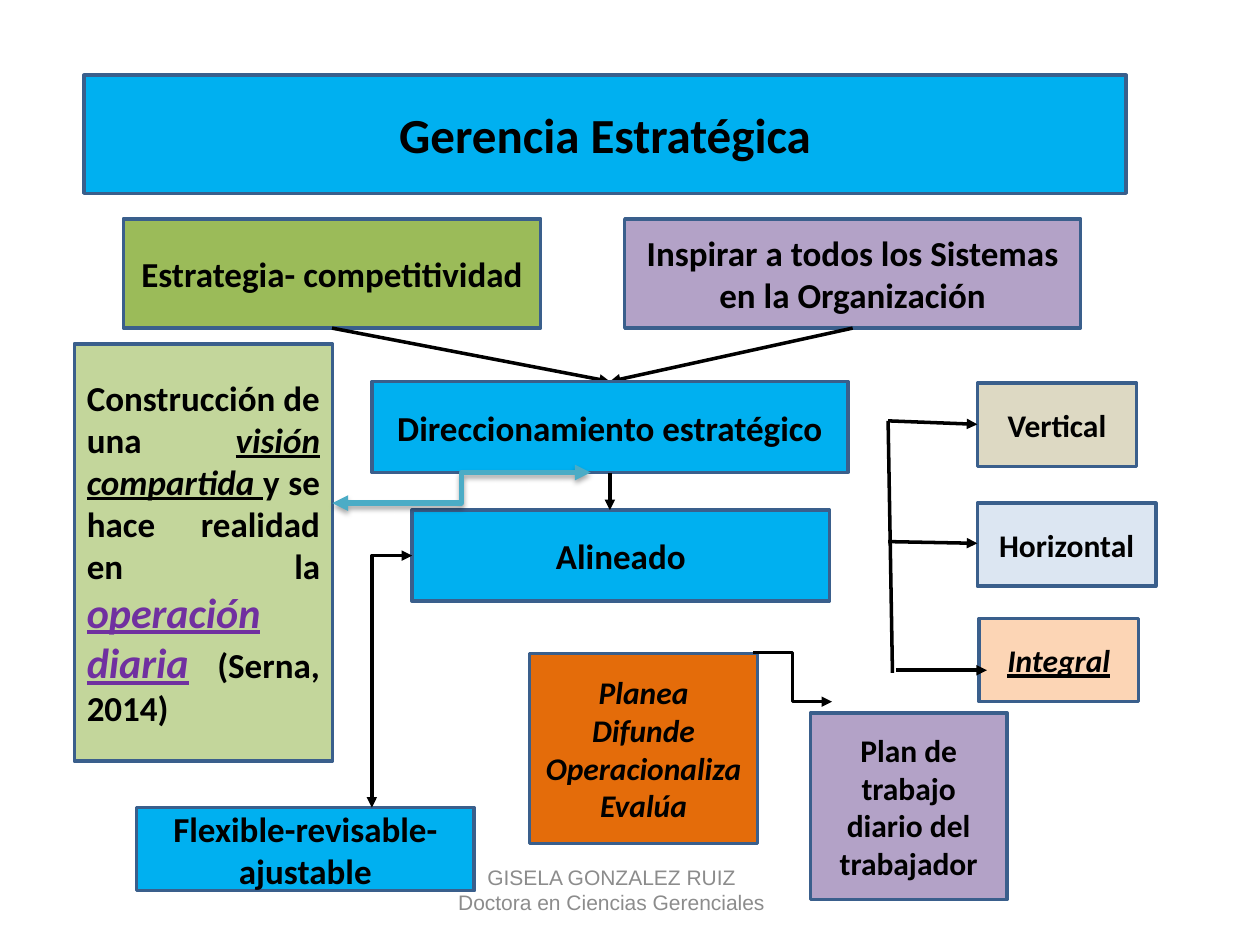
from lxml.etree import SubElement
from pptx import Presentation
from pptx.dml.color import RGBColor
from pptx.enum.shapes import MSO_CONNECTOR, MSO_SHAPE
from pptx.enum.text import MSO_ANCHOR, MSO_AUTO_SIZE, PP_ALIGN
from pptx.oxml.ns import qn
from pptx.util import Pt

BLACK, BORDER, TEAL = "000000", "3A5F8C", "4BACC6"
BLUE, GREEN, LIME, PURPLE = "00B0F0", "9BBB59", "C3D69B", "B3A2C7"
VIOLET, ORANGE, GREY = "7030A0", "E46C0A", "8C8C8C"


def rgb(value):
    return RGBColor.from_string(value)


def style_runs(tf, size, color=BLACK, font="Calibri", align=PP_ALIGN.CENTER,
               bold=True, italic=False, underline=False):
    tf.word_wrap = True
    tf.auto_size = MSO_AUTO_SIZE.NONE
    tf.vertical_anchor = MSO_ANCHOR.MIDDLE
    for p in tf.paragraphs:
        p.alignment = align
        for r in p.runs:
            r.font.name, r.font.size = font, Pt(size)
            r.font.bold, r.font.italic, r.font.underline = bold, italic, underline
            r.font.color.rgb = rgb(color)


def paint(sp, fill):
    sp.fill.solid()
    sp.fill.fore_color.rgb = rgb(fill)
    sp.line.color.rgb = rgb(BORDER)
    sp.line.width = Pt(2)


def add_box(s, x, y, w, h, text, fill, size=20, **style):
    sp = s.shapes.add_shape(MSO_SHAPE.RECTANGLE, Pt(x), Pt(y), Pt(w), Pt(h))
    sp.shadow.inherit = False
    paint(sp, fill)
    sp.text_frame.text = text
    style_runs(sp.text_frame, size, **style)
    return sp


def add_line(s, x1, y1, x2, y2, color=BLACK, width=2, ends=("tailEnd",),
             kind=MSO_CONNECTOR.STRAIGHT):
    cxn = s.shapes.add_connector(kind, Pt(x1), Pt(y1), Pt(x2), Pt(y2))
    cxn.line.color.rgb = rgb(color)
    cxn.line.width = Pt(width)
    ln = cxn.line._ln
    for end in ends:
        SubElement(ln, qn("a:" + end), type="triangle")
    SubElement(cxn._element.spPr, qn("a:effectLst"))
    return cxn


def add_soft_shadow(cxn):
    effects = cxn._element.spPr.find(qn("a:effectLst"))
    shadow = SubElement(effects, qn("a:outerShdw"), blurRad=str(Pt(3.1)),
                        dist=str(Pt(1.8)), dir="5400000", rotWithShape="0")
    color = SubElement(shadow, qn("a:srgbClr"), val=BLACK)
    SubElement(color, qn("a:alpha"), val="35000")


def add_header(s, x, y, w, h):
    title = s.shapes.title
    title.left, title.top, title.width, title.height = Pt(x), Pt(y), Pt(w), Pt(h)
    geom = SubElement(title._element.spPr, qn("a:prstGeom"), prst="roundRect")
    SubElement(geom, qn("a:avLst"))
    paint(title, BLUE)
    title.text_frame.text = "Gerencia Estratégica"
    style_runs(title.text_frame, 28)


def add_footer(s, x, y, w, h):
    tf = s.shapes.add_textbox(Pt(x), Pt(y), Pt(w), Pt(h)).text_frame
    tf.text = "GISELA GONZALEZ RUIZ\nDoctora en Ciencias Gerenciales"
    style_runs(tf, 12, GREY, "Arial", bold=False)


def add_goals(s, x, y, w, h):
    left_w, right_w = 238.5, 260.5
    add_box(s, x, y, left_w, h, "Estrategia- competitividad", GREEN)
    add_box(s, x + w - right_w, y, right_w, h,
            "Inspirar a todos los Sistemas en la Organización", PURPLE)
    center, target = x + 278, y + h + 30.5
    for start in (x + w - right_w / 2, x + left_w / 2):
        add_line(s, start, y + h, center, target)


def add_direction(s, x, y, w, h):
    box_h, inset = 52, 23
    center, lower = x + w / 2, y + h - box_h
    add_box(s, x, y, w, box_h, "Direccionamiento estratégico", BLUE)
    add_box(s, x + inset, lower, 238.5, box_h, "Alineado", BLUE)
    add_line(s, center, y + box_h, center, lower)


def add_vision(s, x, y, w, h):
    sp = add_box(s, x, y, w, h, "", LIME)
    p = sp.text_frame.paragraphs[0]
    parts = [("Construcción de una ", False), ("visión compartida ", True),
             ("y se hace realidad en la ", False), ("operación diaria", True),
             (" ", False), ("(Serna, 2014)", False)]
    for text, _ in parts:
        p.add_run().text = text
    style_runs(sp.text_frame, 20, align=PP_ALIGN.JUSTIFY)
    for r, (_, marked) in zip(p.runs, parts):
        r.font.italic = r.font.underline = marked
    for r in p.runs[3:5]:
        r.font.size = Pt(24)
        r.font.color.rgb = rgb(VIOLET)


def add_alignment_types(s, x, y, w, h):
    box_x, box_h = x + 51, 47.5
    add_box(s, box_x, y, 91, box_h, "Vertical", "DDD9C3", 18)
    add_box(s, box_x, y + 68.5, w - 51, box_h, "Horizontal", "DCE6F2", 18)
    add_box(s, box_x + 1, y + h - box_h, 91, box_h, "Integral", "FCD5B5", 18,
            italic=True, underline=True)
    add_line(s, x, y + 21.5, x + 2.5, y + 165.5, ends=())
    add_line(s, x, y + 21.5, box_x, y + 23.5)
    add_line(s, x, y + 90.5, box_x, y + 91.5)
    add_line(s, x + 4.5, y + 164, x + 56.5, y + 164)


def add_work_plan(s, x, y, w, h):
    add_box(s, x, y, 130.5, 108.5, "Planea\nDifunde\nOperacionaliza\nEvalúa",
            ORANGE, 18, italic=True)
    add_box(s, x + w - 112.5, y + h - 106.5, 112.5, 106.5,
            "Plan de trabajo diario del trabajador", PURPLE, 18)
    add_line(s, x + 128, y - 0.5, x + 173, y + 27.5, width=1.75,
             kind=MSO_CONNECTOR.ELBOW)


def add_flexibility(s, x, y, w, h):
    add_box(s, x, y, w, h, "Flexible-revisable-ajustable", BLUE)
    cxn = add_line(s, x + 157.5, y - 144, x + 134.5, y,
                   ends=("headEnd", "tailEnd"), kind=MSO_CONNECTOR.ELBOW)
    cxn._element.spPr.find(qn("a:prstGeom")).set("prst", "bentConnector2")


def add_vision_link(s, x, y, w, h):
    cxn = add_line(s, x + w, y, x, y + h, TEAL, 3, ("headEnd", "tailEnd"),
                   MSO_CONNECTOR.ELBOW)
    add_soft_shadow(cxn)


def main():
    prs = Presentation()
    prs.slide_width, prs.slide_height = Pt(720), Pt(540)
    s = prs.slides.add_slide(prs.slide_layouts[5])
    add_header(s, 48, 43, 595.5, 67.5)
    add_footer(s, 235.5, 489, 228, 39)
    add_goals(s, 70.5, 125, 547, 62.5)
    add_direction(s, 212.5, 218, 272, 125.5)
    add_vision(s, 42.5, 196.5, 147.5, 238.5)
    add_alignment_types(s, 507.5, 219, 153, 182)
    add_work_plan(s, 302.5, 373.5, 273, 140.5)
    add_flexibility(s, 78, 461.5, 193, 47.5)
    add_vision_link(s, 190, 270, 147.5, 17.5)
    prs.save("out.pptx")


if __name__ == "__main__":
    main()
